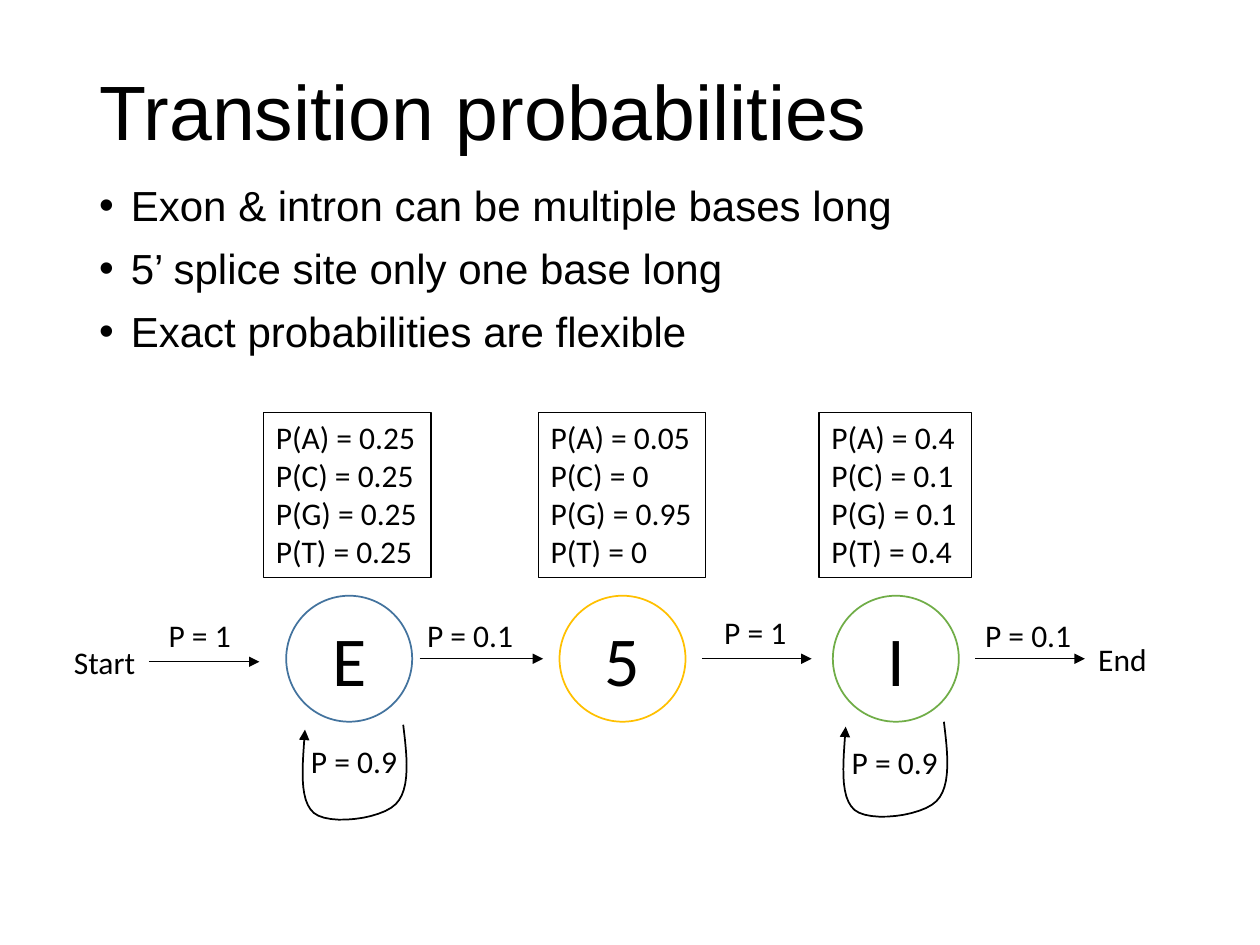
from dataclasses import dataclass

from lxml import etree
from pptx import Presentation
from pptx.dml.color import RGBColor
from pptx.enum.shapes import MSO_CONNECTOR, MSO_SHAPE
from pptx.enum.text import MSO_ANCHOR, MSO_AUTO_SIZE, PP_ALIGN
from pptx.oxml.ns import qn
from pptx.shapes.base import BaseShape
from pptx.slide import Slide
from pptx.text.text import TextFrame
from pptx.util import Cm, Pt

ELLIPSE = MSO_SHAPE.OVAL
STRAIGHT = MSO_CONNECTOR.STRAIGHT
MIDDLE = MSO_ANCHOR.MIDDLE
FIXED_SIZE = MSO_AUTO_SIZE.NONE
FIT_SHAPE = MSO_AUTO_SIZE.SHAPE_TO_FIT_TEXT
LEFT, CENTER = PP_ALIGN.LEFT, PP_ALIGN.CENTER
TITLE_ONLY_LAYOUT = 5


@dataclass(frozen=True)
class Theme:
    ink: RGBColor = RGBColor(0x00, 0x00, 0x00)
    exon: RGBColor = RGBColor(0x43, 0x73, 0x9E)
    splice: RGBColor = RGBColor(0xFF, 0xC0, 0x00)
    intron: RGBColor = RGBColor(0x70, 0xAD, 0x47)
    heading_font: str = "Arial"
    diagram_font: str = "Calibri"
    title_size: float = 44
    bullet_size: float = 24
    state_size: float = 40
    label_size: float = 18
    state_line: float = 1
    loop_line: float = 1
    table_line: float = 0.75
    arrow_line: float = 0.5


@dataclass(frozen=True)
class State:
    name: str
    color: RGBColor
    emissions: dict[str, str]
    box_left: float
    box_width: float


@dataclass(frozen=True)
class Arrow:
    start: float
    end: float
    y: float


@dataclass(frozen=True)
class Label:
    text: str
    left: float
    top: float
    width: float


Point = tuple[float, float]
THEME = Theme()
STATE_LEFT, STATE_TOP, STATE_PITCH, STATE_DIAMETER = 5.77, 12.01, 5.51, 2.54
EMISSION_TOP, EMISSION_HEIGHT = 8.31, 3.33
LABEL_HEIGHT = 1.02
CURVE_STEPS = 12

BULLETS = [
    "Exon & intron can be multiple bases long",
    "5’ splice site only one base long",
    "Exact probabilities are flexible",
]
STATES = [
    State("E", THEME.exon, {"A": "0.25", "C": "0.25", "G": "0.25", "T": "0.25"}, 5.31, 3.38),
    State("5", THEME.splice, {"A": "0.05", "C": "0", "G": "0.95", "T": "0"}, 10.85, 3.38),
    State("I", THEME.intron, {"A": "0.4", "C": "0.1", "G": "0.1", "T": "0.4"}, 16.51, 3.07),
]
ARROWS = [
    Arrow(3.0, 5.23, 13.34),
    Arrow(8.46, 10.95, 13.28),
    Arrow(14.15, 16.36, 13.28),
    Arrow(19.66, 21.87, 13.28),
]
LABELS = [
    Label("Start", 1.24, 12.83, 1.75),
    Label("P = 1", 3.15, 12.29, 1.78),
    Label("P = 0.1", 8.36, 12.29, 2.26),
    Label("P = 1", 14.35, 12.24, 1.78),
    Label("P = 0.1", 19.61, 12.29, 2.26),
    Label("End", 21.89, 12.78, 1.5),
    Label("P = 0.9", 6.02, 14.83, 2.26),
    Label("P = 0.9", 16.92, 14.86, 2.26),
]
LOOP_ORIGINS = [(6.1, 14.61), (17.0, 14.55)]
LOOP_START = (2.03, 0)
LOOP_CURVES = [
    ((2.11, 0.64), (2.18, 1.3), (1.88, 1.6)),
    ((1.57, 1.91), (0.53, 2.03), (0.23, 1.78)),
    ((-0.08, 1.52), (0, 0.81), (0.05, 0.1)),
]


def write_lines(frame: TextFrame, lines: list[str], font_name: str, size: float,
                alignment: PP_ALIGN = LEFT) -> None:
    for index, line in enumerate(lines):
        paragraph = frame.paragraphs[0] if index == 0 else frame.add_paragraph()
        paragraph.alignment = alignment
        run = paragraph.add_run()
        run.text = line
        run.font.name = font_name
        run.font.size = Pt(size)
        run.font.color.rgb = THEME.ink


def set_line(shape: BaseShape, color: RGBColor, width: float) -> None:
    shape.line.color.rgb = color
    shape.line.width = Pt(width)


def add_arrowhead(shape: BaseShape) -> None:
    line = shape._element.spPr.find(qn("a:ln"))
    etree.SubElement(line, qn("a:tailEnd"), type="triangle")


def add_title(slide: Slide) -> None:
    title = slide.shapes.title
    title.left, title.top, title.width, title.height = Cm(1.75), Cm(0.48), Cm(21.9), Cm(3.68)
    frame = title.text_frame
    frame.auto_size = FIXED_SIZE
    frame.vertical_anchor = MIDDLE
    write_lines(frame, ["Transition probabilities"], THEME.heading_font, THEME.title_size)
    frame.paragraphs[0].line_spacing = 0.9


def add_bullets(slide: Slide) -> None:
    box = slide.shapes.add_textbox(Cm(1.75), Cm(3.61), Cm(21.9), Cm(4.19))
    frame = box.text_frame
    frame.word_wrap = True
    write_lines(frame, BULLETS, THEME.heading_font, THEME.bullet_size)
    for paragraph in frame.paragraphs:
        paragraph.line_spacing = 0.9
        paragraph.space_before = Pt(10)
        properties = paragraph._p.get_or_add_pPr()
        properties.set("marL", str(Cm(0.64)))
        properties.set("indent", str(-Cm(0.64)))
        etree.SubElement(properties, qn("a:buFont"), typeface=THEME.heading_font)
        etree.SubElement(properties, qn("a:buChar"), char="•")


def add_text(slide: Slide, lines: list[str], left: float, top: float,
             width: float, height: float) -> BaseShape:
    box = slide.shapes.add_textbox(Cm(left), Cm(top), Cm(width), Cm(height))
    box.text_frame.word_wrap = False
    box.text_frame.auto_size = FIT_SHAPE
    write_lines(box.text_frame, lines, THEME.diagram_font, THEME.label_size)
    return box


def add_state(slide: Slide, state: State, position: int) -> None:
    circle = slide.shapes.add_shape(ELLIPSE, Cm(STATE_LEFT + position * STATE_PITCH),
                                    Cm(STATE_TOP), Cm(STATE_DIAMETER), Cm(STATE_DIAMETER))
    circle.shadow.inherit = False
    circle.fill.background()
    set_line(circle, state.color, THEME.state_line)
    frame = circle.text_frame
    frame.margin_left = frame.margin_right = frame.margin_top = frame.margin_bottom = 0
    frame.vertical_anchor = MIDDLE
    frame.word_wrap = False
    write_lines(frame, [state.name], THEME.diagram_font, THEME.state_size, CENTER)
    emissions = [f"P({base}) = {value}" for base, value in state.emissions.items()]
    box = add_text(slide, emissions, state.box_left, EMISSION_TOP,
                   state.box_width, EMISSION_HEIGHT)
    set_line(box, THEME.ink, THEME.table_line)


def add_arrow(slide: Slide, arrow: Arrow) -> None:
    connector = slide.shapes.add_connector(STRAIGHT, Cm(arrow.start), Cm(arrow.y),
                                           Cm(arrow.end), Cm(arrow.y))
    set_line(connector, THEME.ink, THEME.arrow_line)
    add_arrowhead(connector)
    etree.SubElement(connector._element.spPr, qn("a:effectLst"))


def curve_point(anchors: tuple[Point, ...], t: float) -> Point:
    weights = ((1 - t) ** 3, 3 * t * (1 - t) ** 2, 3 * t ** 2 * (1 - t), t ** 3)
    x, y = (sum(w * anchor[axis] for w, anchor in zip(weights, anchors)) for axis in (0, 1))
    return x, y


def add_loop(slide: Slide, origin: Point) -> None:
    points = [LOOP_START]
    for curve in LOOP_CURVES:
        anchors = (points[-1], *curve)
        points += [curve_point(anchors, step / CURVE_STEPS) for step in range(1, CURVE_STEPS + 1)]
    placed = [(Cm(origin[0] + x), Cm(origin[1] + y)) for x, y in points]
    builder = slide.shapes.build_freeform(*placed[0])
    builder.add_line_segments(placed[1:], close=False)
    loop = builder.convert_to_shape()
    loop.shadow.inherit = False
    loop.fill.background()
    set_line(loop, THEME.ink, THEME.loop_line)
    add_arrowhead(loop)


def main() -> None:
    presentation = Presentation()
    presentation.slide_width, presentation.slide_height = Cm(25.4), Cm(19.05)
    slide = presentation.slides.add_slide(presentation.slide_layouts[TITLE_ONLY_LAYOUT])
    add_title(slide)
    add_bullets(slide)
    for position, state in enumerate(STATES):
        add_state(slide, state, position)
    for arrow in ARROWS:
        add_arrow(slide, arrow)
    for origin in LOOP_ORIGINS:
        add_loop(slide, origin)
    for label in LABELS:
        add_text(slide, [label.text], label.left, label.top, label.width, LABEL_HEIGHT)
    presentation.save("out.pptx")


if __name__ == "__main__":
    main()
